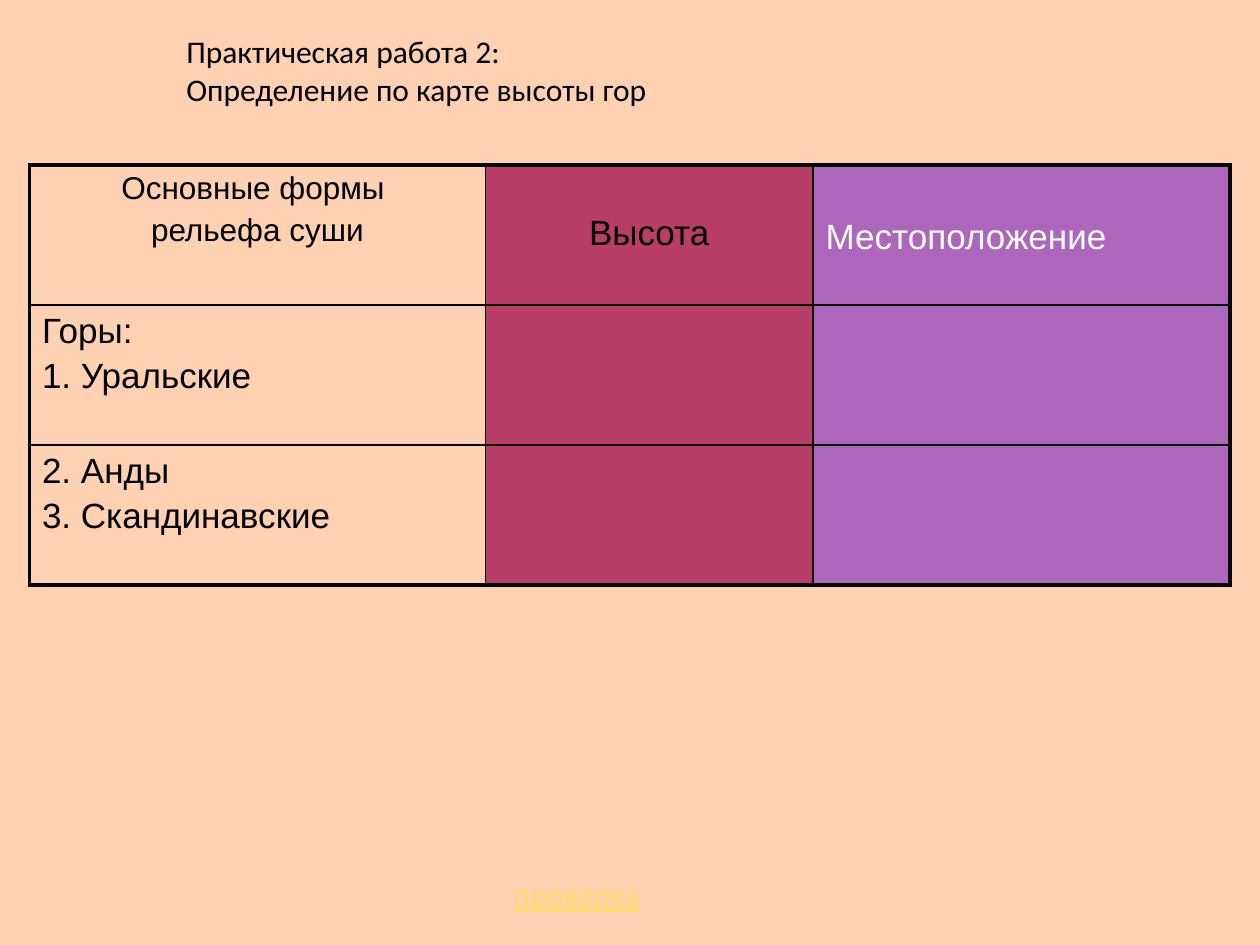
from lxml.etree import SubElement
from pptx import Presentation
from pptx.dml.color import RGBColor
from pptx.enum.text import PP_ALIGN
from pptx.oxml.ns import qn
from pptx.util import Pt

COLORS = {"page": "FDD1B1", "ink": "000000", "height": "B83D68",
          "place": "AC66BB", "light": "FFFFFF", "check": "FFDE66"}
CENTER = {"alignment": PP_ALIGN.CENTER}


class SlideBuilder:
    """Hold the style and the current slide, and draw each kind of element."""

    def __init__(self, deck):
        self.page = deck.slides.add_slide(deck.slide_layouts[6])
        fill = self.page.background.fill
        fill.solid()
        fill.fore_color.rgb = self.color("page")

    def color(self, name):
        return RGBColor.from_string(COLORS[name])

    def add_lines(self, frame, lines, color="ink", para_format=None, **font_format):
        for index, line in enumerate(lines):
            para = frame.add_paragraph() if index else frame.paragraphs[0]
            for name, value in (para_format or {}).items():
                setattr(para, name, value)
            span = para.add_run()
            span.text = line
            span.font.color.rgb = self.color(color)
            for name, value in font_format.items():
                setattr(span.font, name, value)

    def text(self, left, top, width, height, lines, **style):
        box = self.page.shapes.add_textbox(Pt(left), Pt(top), Pt(width), Pt(height))
        box.text_frame.word_wrap = True
        self.add_lines(box.text_frame, lines, name="Calibri", size=Pt(18), **style)

    def border(self, cell, side, width):
        line = SubElement(cell._tc.get_or_add_tcPr(), qn(f"a:ln{side}"), w=str(Pt(width)))
        fill = SubElement(line, qn("a:solidFill"))
        SubElement(fill, qn("a:srgbClr"), val=COLORS["ink"])

    def table(self, left, top, widths, row_height, rows, fills):
        count = len(rows)
        frame = self.page.shapes.add_table(count, len(widths), Pt(left), Pt(top),
                                           Pt(sum(widths)), Pt(row_height * count))
        table = frame.table
        for column, width in zip(table.columns, widths):
            column.width = Pt(width)
        for r, row in enumerate(rows):
            table.rows[r].height = Pt(row_height)
            for c, content in enumerate(row):
                cell = table.cell(r, c)
                outer = {"L": c == 0, "R": c == len(widths) - 1,
                         "T": r == 0, "B": r == count - 1}
                for side, is_outer in outer.items():
                    self.border(cell, side, 2.25 if is_outer else 1)
                if fills[c]:
                    cell.fill.solid()
                    cell.fill.fore_color.rgb = self.color(fills[c])
                else:
                    cell.fill.background()
                if content:
                    self.fill_cell(cell, **content)

    def fill_cell(self, cell, lines, size=20, top=3.6, color="ink", layout=None):
        cell.margin_top = Pt(top)
        para_format = {"space_before": Pt(3.4), **(layout or {})}
        self.add_lines(cell.text_frame, lines, color, para_format, name="Arial", size=Pt(size))


def main():
    deck = Presentation()
    deck.slide_width, deck.slide_height = Pt(720), Pt(540)
    slide = SlideBuilder(deck)
    slide.text(99.4, 15, 556, 84,
               ["Практическая работа 2:", "Определение по карте высоты гор"])
    rows = [
        [{"lines": ["Основные формы ", "рельефа суши"], "size": 18, "layout": CENTER},
         {"lines": ["Высота"], "top": 28, "layout": CENTER},
         {"lines": ["Местоположение"], "top": 30, "color": "light"}],
        [{"lines": ["Горы:", "1. Уральские"]}, None, None],
        [{"lines": ["2. Анды", "3. Скандинавские"]}, None, None],
    ]
    slide.table(16.8, 94.3, [260.6, 187.2, 238.3], 80, rows, [None, "height", "place"])
    slide.text(286.5, 496, 100, 29, ["проверка"], color="check", underline=True)
    deck.save("out.pptx")


if __name__ == "__main__":
    main()
